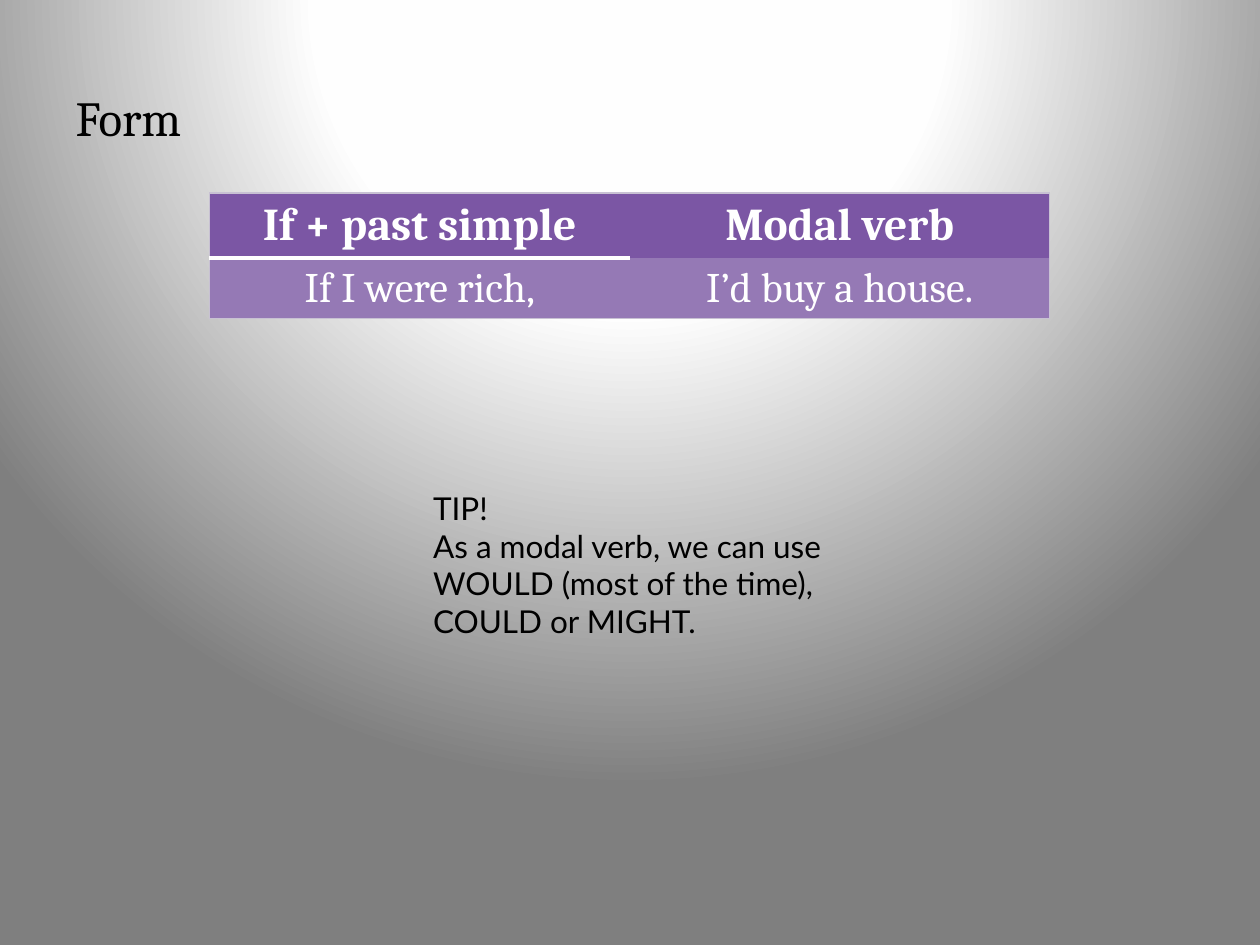
import pptx
import pptx.dml.color
import pptx.enum.text
import pptx.oxml
import pptx.oxml.ns
import pptx.util
from pptx.util import Cm

TITLE = "Form"
TABLE = [
    ("If + past simple", "Modal verb"),
    ("If I were rich,", "I’d buy a house."),
]
TIP = [
    "TIP!",
    "As a modal verb, we can use WOULD (most of the time), COULD or MIGHT.",
]

THEME = {
    "title": {"name": "Cambria", "size": 28, "bold": False, "color": "000000"},
    "header": {"name": "Cambria", "size": 26, "bold": True, "color": "FFFFFF"},
    "body": {"name": "Cambria", "size": 24, "bold": False, "color": "FFFFFF"},
    "tip": {"name": "Lato", "size": 18, "bold": False, "color": "000000"},
    "row_fills": ("7B56A4", "9579B5"),
    "edge": ("C8C1D3", 0.75),
    "rule": ("FFFFFF", 3),
    "background": ((0, "FFFFFF"), (40, "FEFEFE"), (100, "7F7F7F")),
}
NO_TABLE_STYLE = "{2D5ABB26-0587-4C30-8999-92F81FD0307C}"
qn = pptx.oxml.ns.qn
NS = pptx.oxml.ns.nsdecls("a")
ALIGN = pptx.enum.text.PP_ALIGN


def rgb(value):
    return pptx.dml.color.RGBColor.from_string(value)


def write(tf, lines, style, align=ALIGN.LEFT):
    tf.word_wrap = True
    for i, line in enumerate(lines):
        p = tf.paragraphs[0] if i == 0 else tf.add_paragraph()
        p.alignment = align
        r = p.add_run()
        r.text = line
        for key, value in THEME[style].items():
            if key == "color":
                r.font.color.rgb = rgb(value)
            else:
                setattr(r.font, key, pptx.util.Pt(value) if key == "size" else value)


def paint_background(s):
    """Radial gradient centred above the slide."""
    s.background.fill.gradient()
    old = s.element.find(".//" + qn("a:gradFill"))
    stops = "".join(
        f'<a:gs pos="{pos * 1000}"><a:srgbClr val="{color}"/></a:gs>'
        for pos, color in THEME["background"]
    )
    new = pptx.oxml.parse_xml(
        f'<a:gradFill {NS} rotWithShape="1"><a:gsLst>{stops}</a:gsLst>'
        '<a:path path="circle"><a:fillToRect l="50000" t="-80000" '
        'r="50000" b="180000"/></a:path></a:gradFill>'
    )
    old.getparent().replace(old, new)


def set_borders(cell, borders):
    """Borders must come before the fill, in the order L, R, T, B."""
    tcPr = cell._tc.get_or_add_tcPr()
    sides = [side for side in "LRTB" if side in borders]
    for i, side in enumerate(sides):
        color, width = borders[side]
        tcPr.insert(i, pptx.oxml.parse_xml(
            f'<a:ln{side} {NS} w="{int(width * 12700)}"><a:solidFill>'
            f'<a:srgbClr val="{color}"/></a:solidFill></a:ln{side}>'
        ))


def add_form_table(s):
    rows, cols = len(TABLE), len(TABLE[0])
    table = s.shapes.add_table(
        rows, cols, Cm(4.23), Cm(3.89), Cm(16.93), Cm(2.08)
    ).table
    table.first_row = table.horz_banding = False
    table._tbl.tblPr.find(qn("a:tableStyleId")).text = NO_TABLE_STYLE
    for i, row in enumerate(TABLE):
        for j, text in enumerate(row):
            cell = table.cell(i, j)
            write(cell.text_frame, [text], "body" if i else "header", ALIGN.CENTER)
            cell.fill.solid()
            cell.fill.fore_color.rgb = rgb(THEME["row_fills"][i])
            outer = {"L": j == 0, "R": j == cols - 1, "T": i == 0, "B": i == rows - 1}
            borders = {side: THEME["edge"] for side, on in outer.items() if on}
            if (i, j) == (0, 0):
                borders["B"] = THEME["rule"]
            set_borders(cell, borders)


def main():
    prs = pptx.Presentation()
    prs.slide_width, prs.slide_height = Cm(25.4), Cm(19.05)
    s = prs.slides.add_slide(prs.slide_layouts[5])
    paint_background(s)

    title = s.shapes.title
    title.left, title.top, title.width, title.height = (
        Cm(1.27), Cm(0.76), Cm(22.86), Cm(3.18)
    )
    title.text_frame.vertical_anchor = pptx.enum.text.MSO_ANCHOR.MIDDLE
    write(title.text_frame, [TITLE], "title")

    add_form_table(s)

    tip = s.shapes.add_textbox(Cm(8.48), Cm(9.73), Cm(8.43), Cm(3.33))
    tip.text_frame.auto_size = pptx.enum.text.MSO_AUTO_SIZE.SHAPE_TO_FIT_TEXT
    write(tip.text_frame, TIP, "tip")

    prs.save("out.pptx")


if __name__ == "__main__":
    main()
